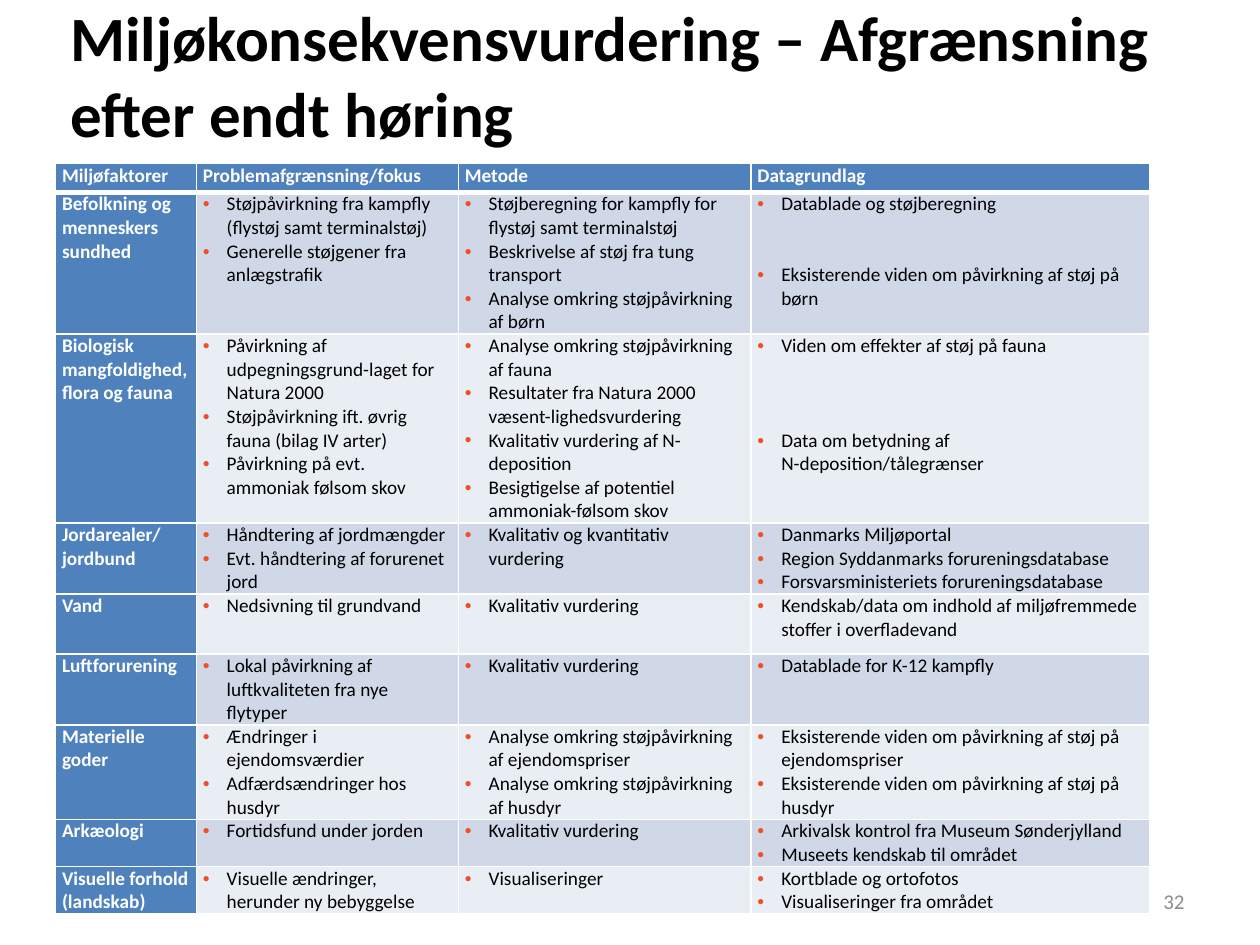
import lxml.etree
import pptx
import pptx.dml.color
import pptx.enum.text
import pptx.oxml
import pptx.oxml.ns
import pptx.util

Cm = pptx.util.Cm
Pt = pptx.util.Pt
LINE = 13.5
COLUMN_WIDTHS = [2.84, 5.28, 5.9, 8.03]
HEADINGS = ["Miljøfaktorer", "Problemafgrænsning/fokus", "Metode", "Datagrundlag"]
BODY_FORMAT = {"size": Pt(11), "bold": False}
HEAD_FORMAT = {"size": Pt(11), "bold": True}
CELL_MARGINS = {"margin_left": Cm(0.13), "margin_top": 0, "margin_right": Cm(0.13), "margin_bottom": 0}
FACTORS = [
    (2.84, "Befolkning og menneskers sundhed",
     ["Støjpåvirkning fra kampfly (flystøj samt terminalstøj)", "Generelle støjgener fra anlægstrafik"],
     ["Støjberegning for kampfly for flystøj samt terminalstøj", "Beskrivelse af støj fra tung transport",
      "Analyse omkring støjpåvirkning af børn"],
     ["Datablade og støjberegning", "Eksisterende viden om påvirkning af støj på børn"]),
    (3.8, "Biologisk mangfoldighed, flora og fauna",
     ["Påvirkning af udpegningsgrund-laget for Natura 2000", "Støjpåvirkning ift. øvrig fauna (bilag IV arter)",
      "Påvirkning på evt. ammoniak følsom skov"],
     ["Analyse omkring støjpåvirkning af fauna", "Resultater fra Natura 2000 væsent-lighedsvurdering",
      "Kvalitativ vurdering af N-deposition", "Besigtigelse af potentiel ammoniak-følsom skov"],
     ["Viden om effekter af støj på fauna", "Data om betydning af N-deposition/tålegrænser"]),
    (1.42, "Jordarealer/ jordbund",
     ["Håndtering af jordmængder", "Evt. håndtering af forurenet jord"],
     ["Kvalitativ og kvantitativ vurdering"],
     ["Danmarks Miljøportal", "Region Syddanmarks forureningsdatabase", "Forsvarsministeriets forureningsdatabase"]),
    (1.21, "Vand", ["Nedsivning til grundvand"], ["Kvalitativ vurdering"],
     ["Kendskab/data om indhold af miljøfremmede stoffer i overfladevand"]),
    (0.95, "Luftforurening", ["Lokal påvirkning af luftkvaliteten fra nye flytyper"], ["Kvalitativ vurdering"],
     ["Datablade for K-12 kampfly"]),
    (1.9, "Materielle goder",
     ["Ændringer i ejendomsværdier", "Adfærdsændringer hos husdyr"],
     ["Analyse omkring støjpåvirkning af ejendomspriser", "Analyse omkring støjpåvirkning af husdyr"],
     ["Eksisterende viden om påvirkning af støj på ejendomspriser",
      "Eksisterende viden om påvirkning af støj på husdyr"]),
    (0.95, "Arkæologi", ["Fortidsfund under jorden"], ["Kvalitativ vurdering"],
     ["Arkivalsk kontrol fra Museum Sønderjylland", "Museets kendskab til området"]),
    (0.95, "Visuelle forhold (landskab)", ["Visuelle ændringer, herunder ny bebyggelse"], ["Visualiseringer"],
     ["Kortblade og ortofotos", "Visualiseringer fra området"]),
]
LINES_SKIPPED_BEFORE = {
    "Eksisterende viden om påvirkning af støj på børn": 2,
    "Data om betydning af N-deposition/tålegrænser": 3,
}


def rgb(value):
    """Turn a hex string into a colour."""
    return pptx.dml.color.RGBColor.from_string(value)


def apply(target, values):
    """Set each attribute named in values on target."""
    for name, value in values.items():
        setattr(target, name, value)


def write(paragraph, text, color, font_format):
    """Write one formatted run into a paragraph."""
    run = paragraph.add_run()
    run.text = text
    apply(run.font, {"name": "Calibri", **font_format})
    run.font.color.rgb = rgb(color)


def add_text(slide, box, text, color, font_format, alignment, anchor):
    """Place a wrapped text box holding one paragraph."""
    frame = slide.shapes.add_textbox(*map(Cm, box)).text_frame
    apply(frame, {"word_wrap": True, "vertical_anchor": anchor})
    frame.paragraphs[0].alignment = alignment
    write(frame.paragraphs[0], text, color, font_format)


def add_bullet(paragraph):
    """Give a paragraph an orange bullet and a hanging indent."""
    properties = paragraph._p.get_or_add_pPr()
    properties.set("marL", str(Cm(0.48)))
    properties.set("indent", str(-Cm(0.48)))
    namespace = pptx.oxml.ns.nsdecls("a")
    for xml in (f'<a:buClr {namespace}><a:srgbClr val="F04E23"/></a:buClr>',
                f'<a:buFont {namespace} typeface="Arial"/>',
                f'<a:buChar {namespace} char="•"/>',
                f'<a:tabLst {namespace}><a:tab pos="{Cm(0.76)}" algn="l"/></a:tabLst>'):
        properties.append(pptx.oxml.parse_xml(xml))


def draw_borders(cell, bottom_width):
    """Draw white lines on the four sides of a cell."""
    properties = cell._tc.get_or_add_tcPr()
    for side, width in {"L": 1, "R": 1, "T": 1, "B": bottom_width}.items():
        line = lxml.etree.SubElement(properties, pptx.oxml.ns.qn(f"a:ln{side}"), w=str(Pt(width)))
        fill = lxml.etree.SubElement(line, pptx.oxml.ns.qn("a:solidFill"))
        lxml.etree.SubElement(fill, pptx.oxml.ns.qn("a:srgbClr"), val="FFFFFF")


def fill_cell(cell, texts, fill, color, font_format, bulleted=False, bottom_width=1):
    """Format a cell and write one paragraph for each text."""
    apply(cell, CELL_MARGINS)
    draw_borders(cell, bottom_width)
    cell.fill.solid()
    cell.fill.fore_color.rgb = rgb(fill)
    for index, text in enumerate(texts):
        paragraph = cell.text_frame.add_paragraph() if index else cell.text_frame.paragraphs[0]
        skipped = LINES_SKIPPED_BEFORE.get(text, 0)
        apply(paragraph, {"line_spacing": Pt(LINE), "space_before": Pt(LINE * skipped)})
        if bulleted:
            add_bullet(paragraph)
        write(paragraph, text, color, font_format)


def add_factor_table(slide):
    """Add the table of environmental factors."""
    heights = [0.58] + [factor[0] for factor in FACTORS]
    table = slide.shapes.add_table(len(heights), len(COLUMN_WIDTHS), Cm(1.12), Cm(3.3),
                                   Cm(sum(COLUMN_WIDTHS)), Cm(sum(heights))).table
    apply(table, {"first_row": False, "horz_banding": False})
    for column, width in zip(table.columns, COLUMN_WIDTHS):
        column.width = Cm(width)
    for row, height in zip(table.rows, heights):
        row.height = Cm(height)
    for column, heading in enumerate(HEADINGS):
        fill_cell(table.cell(0, column), [heading], "4F81BD", "FFFFFF", HEAD_FORMAT, bottom_width=3)
    for row, (_, factor, *details) in enumerate(FACTORS, 1):
        fill_cell(table.cell(row, 0), [factor], "4F81BD", "FFFFFF", HEAD_FORMAT)
        band = "D0D8E8" if row % 2 else "E9EDF4"
        for column, texts in enumerate(details, 1):
            fill_cell(table.cell(row, column), texts, band, "000000", BODY_FORMAT, bulleted=True)


def main():
    """Build the slide and save it."""
    presentation = pptx.Presentation()
    apply(presentation, {"slide_width": Cm(25.4), "slide_height": Cm(19.05)})
    slide = presentation.slides.add_slide(presentation.slide_layouts[6])
    align, anchor = pptx.enum.text.PP_ALIGN, pptx.enum.text.MSO_ANCHOR
    add_text(slide, (18.2, 17.66, 5.93, 1.01), "32", "8C8C8C", {"size": Pt(12)}, align.RIGHT, anchor.MIDDLE)
    add_text(slide, (1.17, -0.15, 24.23, 3.33), "Miljøkonsekvensvurdering – Afgrænsning efter endt høring",
             "000000", {"size": Pt(36), "bold": True}, align.LEFT, anchor.TOP)
    add_factor_table(slide)
    presentation.save("out.pptx")


if __name__ == "__main__":
    main()
